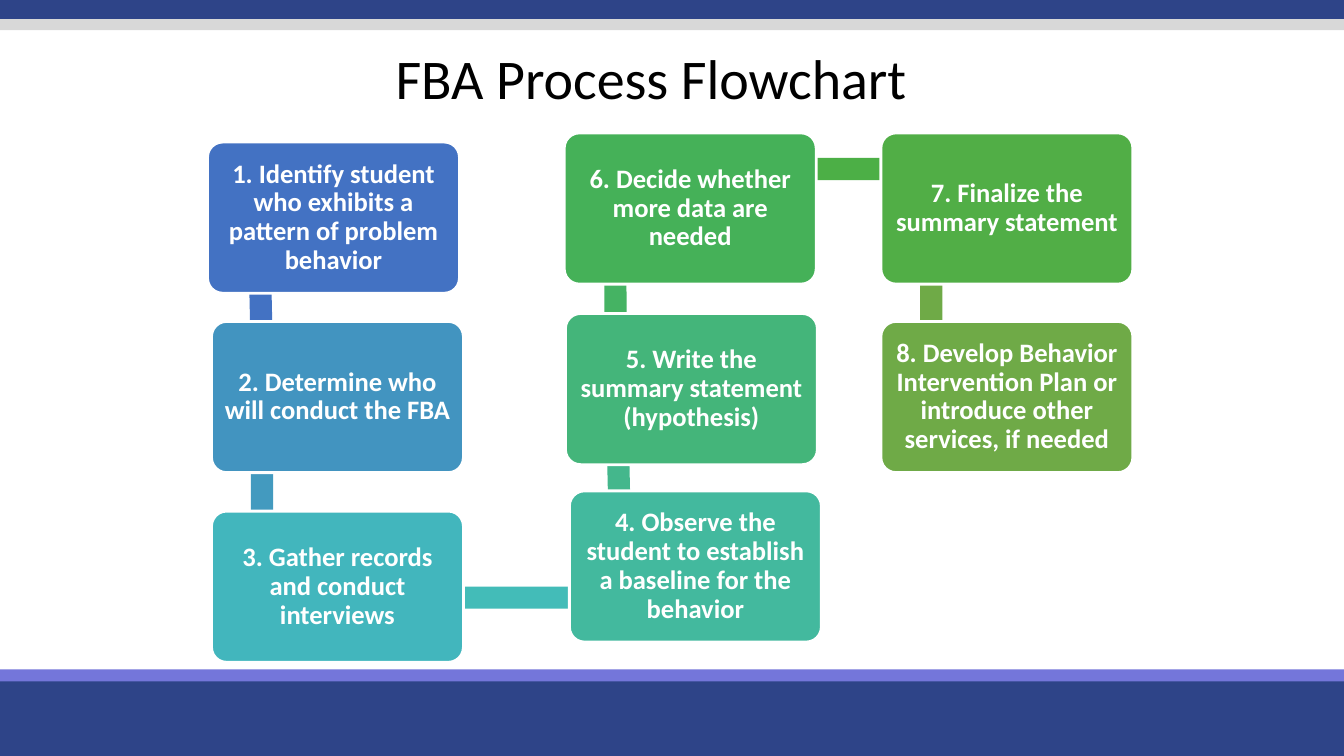
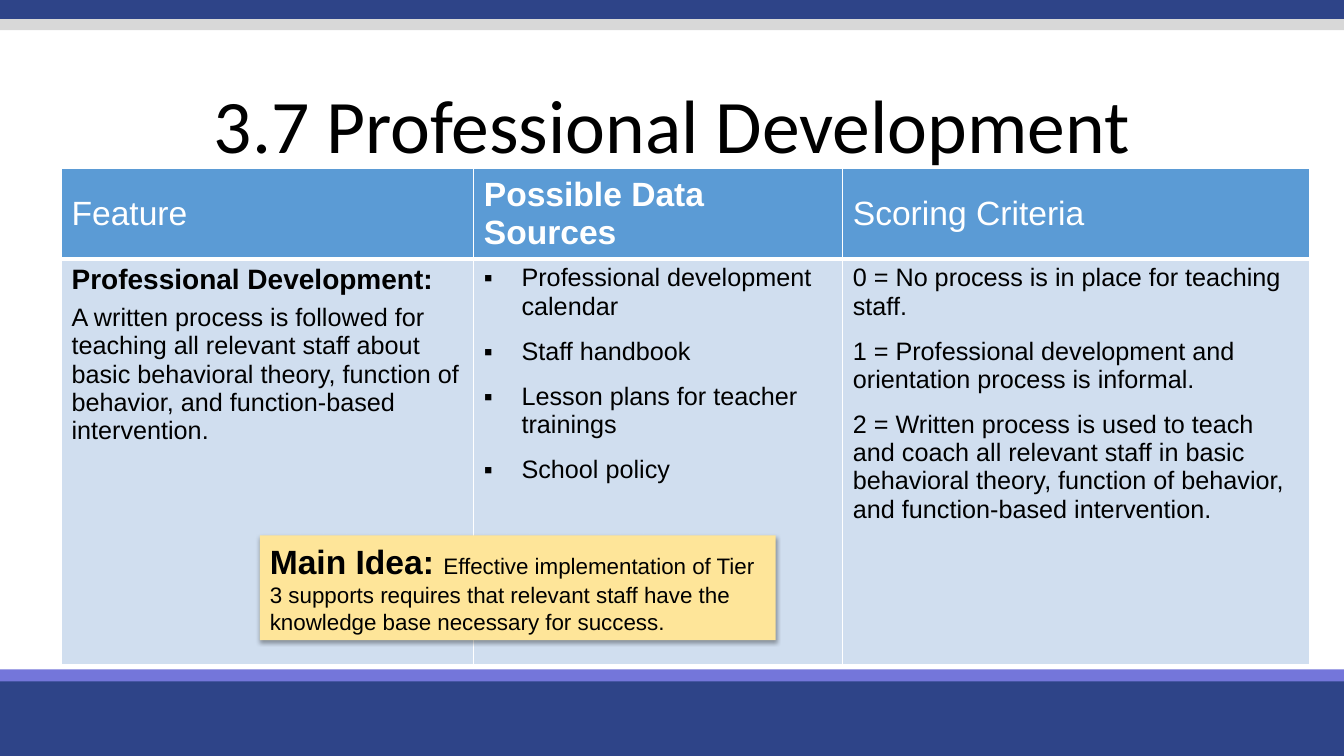
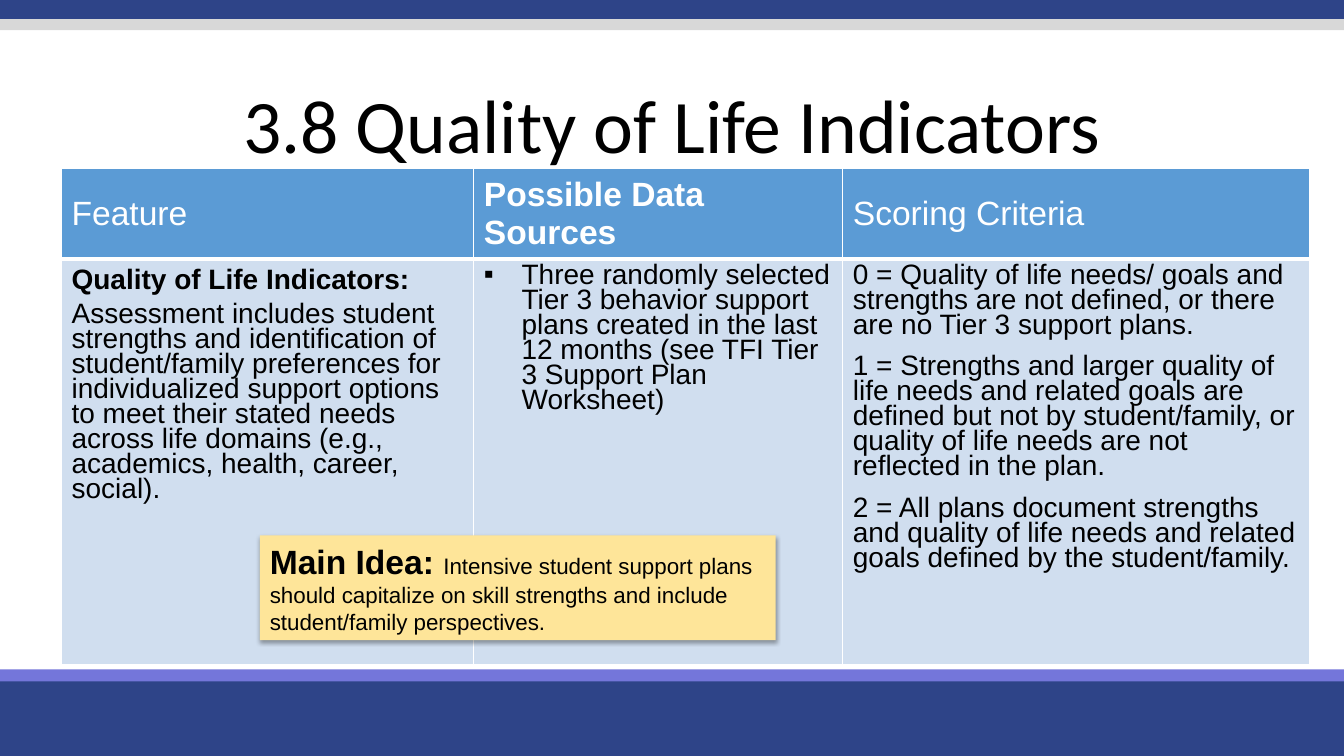
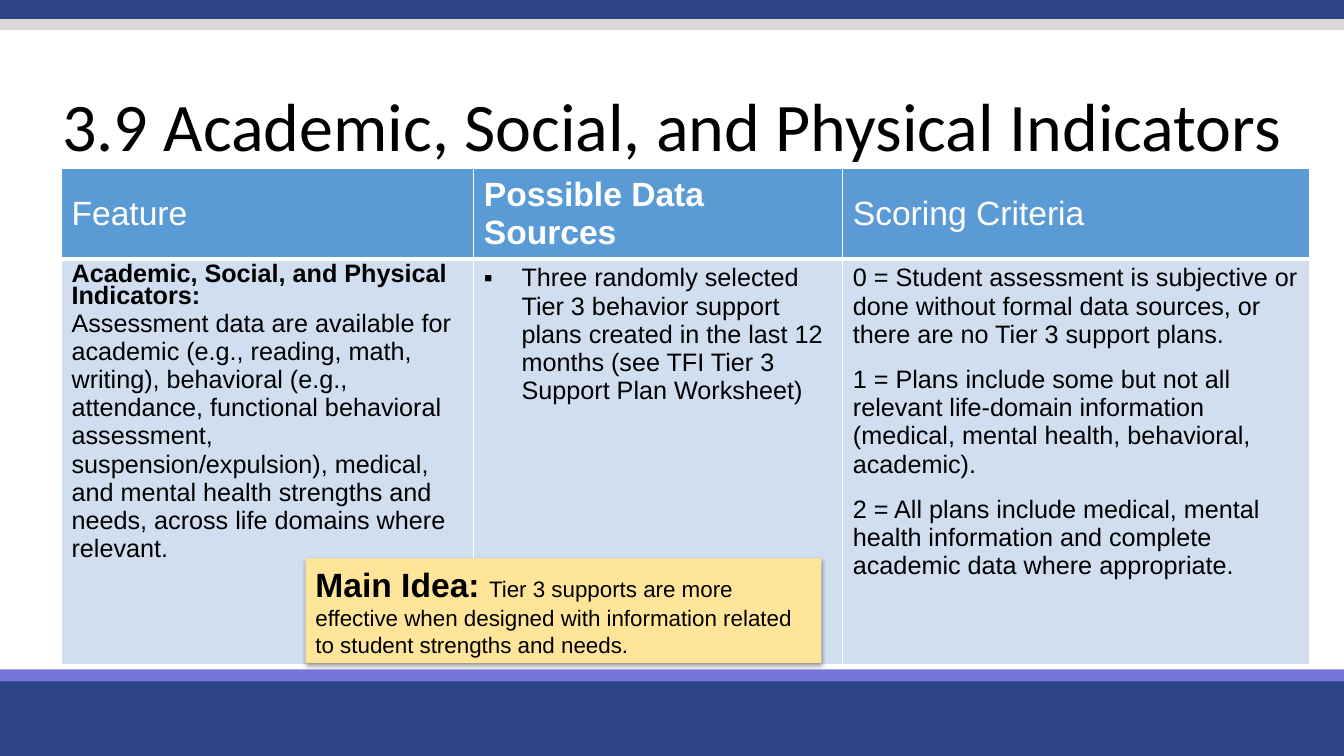
from math import atan2, degrees, hypot

from lxml.etree import SubElement
from pptx import Presentation
from pptx.dml.color import RGBColor
from pptx.enum.shapes import MSO_SHAPE
from pptx.enum.text import MSO_ANCHOR, PP_ALIGN
from pptx.oxml.ns import qn
from pptx.util import Cm, Pt

# Shared style
NAVY = RGBColor(0x2E, 0x44, 0x88)
VIOLET = RGBColor(0x74, 0x76, 0xDA)
SILVER = RGBColor(0xD8, 0xD8, 0xD8)
BLACK = RGBColor(0, 0, 0)
WHITE = RGBColor(0xFF, 0xFF, 0xFF)
HEADER_BLUE = RGBColor(0x5B, 0x9B, 0xD5)
CELL_BLUE = RGBColor(0xD0, 0xDE, 0xEF)
NOTE_YELLOW = RGBColor(0xFE, 0xE5, 0x99)
HEAD_FONT, BODY_FONT = "Calibri", "Arial"

SLIDE_W, SLIDE_H = 33.87, 19.05
BANDS = [(17.02, 2.03, NAVY), (16.87, 0.3, VIOLET), (0, 0.49, NAVY), (0.48, 0.28, SILVER)]

# Flowchart: left and top within the chart, fill, wording
STEP_W, STEP_H, BAR_THICKNESS = 6.35, 3.81, 0.56
STEPS = [
    (0, 0.23, RGBColor(0x43, 0x72, 0xC3), "1. Identify student who exhibits a pattern of problem behavior"),
    (0.1, 4.75, RGBColor(0x42, 0x94, 0xC0), "2. Determine who will conduct the FBA"),
    (0.1, 9.53, RGBColor(0x42, 0xB6, 0xBD), "3. Gather records and conduct interviews"),
    (9.12, 9.02, RGBColor(0x43, 0xB9, 0x9E), "4. Observe the student to establish a baseline for the behavior"),
    (9.02, 4.55, RGBColor(0x44, 0xB5, 0x7A), "5. Write the summary statement (hypothesis)"),
    (8.99, 0, RGBColor(0x45, 0xB1, 0x58), "6. Decide whether more data are needed"),
    (16.97, 0, RGBColor(0x51, 0xAE, 0x46), "7. Finalize the summary statement"),
    (16.97, 4.75, RGBColor(0x6F, 0xAA, 0x47),
     "8. Develop Behavior Intervention Plan or introduce other services, if needed"),
]
# One bar between each step and the next: colour, anchors within both steps
ANCHOR = (1.27, 0.91)
BARS = [
    (RGBColor(0x43, 0x72, 0xC3), ANCHOR, ANCHOR),
    (RGBColor(0x43, 0x9A, 0xBF), ANCHOR, ANCHOR),
    (RGBColor(0x43, 0xBC, 0xB8), (2.05, 2.18), (2.05, 2.69)),
    (RGBColor(0x44, 0xB7, 0x8C), ANCHOR, ANCHOR),
    (RGBColor(0x45, 0xB3, 0x63), ANCHOR, ANCHOR),
    (RGBColor(0x4C, 0xAF, 0x46), ANCHOR, ANCHOR),
    (RGBColor(0x6F, 0xAA, 0x47), ANCHOR, ANCHOR),
]

# Scoring tables
HEADINGS = [("Feature", False), ("Possible Data Sources", True), ("Scoring Criteria", False)]
COLUMN_WIDTHS = [10.39, 9.3, 11.76]
ROW_HEIGHTS = [2.08, 10.21]
PLANS = ("Three randomly selected Tier 3 behavior support plans created in the last "
         "12 months (see TFI Tier 3 Support Plan Worksheet)")
FEATURES = [
    {
        "title": "3.7 Professional Development", "title_size": 54,
        "name": "Professional Development:", "name_size": 20, "name_spacing": None,
        "description": "A written process is followed for teaching all relevant staff about basic "
                       "behavioral theory, function of behavior, and function-based intervention.",
        "gap": 6, "size": 18, "spacing": None,
        "sources": ["Professional development calendar", "Staff handbook",
                    "Lesson plans for teacher trainings", "School policy"],
        "criteria": [
            "0 = No process is in place for teaching staff.",
            "1 = Professional development and orientation process is informal.",
            "2 = Written process is used to teach and coach all relevant staff in basic behavioral "
            "theory, function of behavior, and function-based intervention."],
        "idea": "Effective implementation of Tier 3 supports requires that relevant staff have the "
                "knowledge base necessary for success.",
        "idea_at": (6.55, 13.49),
    },
    {
        "title": "3.8 Quality of Life Indicators", "title_size": 54,
        "name": "Quality of Life Indicators:", "name_size": 20, "name_spacing": None,
        "description": "Assessment includes student strengths and identification of student/family "
                       "preferences for individualized support options to meet their stated needs "
                       "across life domains (e.g., academics, health, career, social).",
        "gap": 6, "size": 20, "spacing": 0.8,
        "sources": [PLANS],
        "criteria": [
            "0 = Quality of life needs/ goals and strengths are not defined, or there are no Tier 3 "
            "support plans.",
            "1 = Strengths and larger quality of life needs and related goals are defined but not by "
            "student/family, or quality of life needs are not reflected in the plan.",
            "2 = All plans document strengths and quality of life needs and related goals defined by "
            "the student/family."],
        "idea": "Intensive student support plans should capitalize on skill strengths and include "
                "student/family perspectives.",
        "idea_at": (6.55, 13.49),
    },
    {
        "title": "3.9 Academic, Social, and Physical Indicators", "title_size": 48.6,
        "name": "Academic, Social, and Physical Indicators:", "name_size": 18, "name_spacing": 0.8,
        "description": "Assessment data are available for academic (e.g., reading, math, writing), "
                       "behavioral (e.g., attendance, functional behavioral assessment, "
                       "suspension/expulsion), medical, and mental health strengths and needs, "
                       "across life domains where relevant.",
        "gap": None, "size": 18, "spacing": None,
        "sources": [PLANS],
        "criteria": [
            "0 = Student assessment is subjective or done without formal data sources, or there are "
            "no Tier 3 support plans.",
            "1 = Plans include some but not all relevant life-domain information (medical, mental "
            "health, behavioral, academic).",
            "2 = All plans include medical, mental health information and complete academic data "
            "where appropriate."],
        "idea": "Tier 3 supports are more effective when designed with information related to "
                "student strengths and needs.",
        "idea_at": (7.7, 14.07),
    },
]


def style_run(run, size, color=BLACK, bold=False, font=BODY_FONT):
    run.font.name = font
    run.font.size = Pt(size)
    run.font.bold = bold
    run.font.color.rgb = color


def add_block(slide, kind, left, top, width, height, fill):
    block = slide.shapes.add_shape(kind, Cm(left), Cm(top), Cm(width), Cm(height))
    block.shadow.inherit = False
    block.fill.solid()
    block.fill.fore_color.rgb = fill
    block.line.fill.background()
    return block


def new_slide(deck, title, size, box):
    """Blank slide with the bands and a centred title in the given box."""
    slide = deck.slides.add_slide(deck.slide_layouts[6])
    for top, height, color in BANDS:
        add_block(slide, MSO_SHAPE.RECTANGLE, 0, top, SLIDE_W, height, color)
    frame = slide.shapes.add_textbox(*(Cm(length) for length in box)).text_frame
    frame.word_wrap = True
    frame.vertical_anchor = MSO_ANCHOR.MIDDLE
    heading = frame.paragraphs[0]
    heading.text = title
    heading.alignment = PP_ALIGN.CENTER
    heading.line_spacing = 0.9
    style_run(heading.runs[0], size, font=HEAD_FONT)
    return slide


# Flowchart parts
def add_bar(slide, start, end, color):
    dx, dy = end[0] - start[0], end[1] - start[1]
    length = hypot(dx, dy)
    left = (start[0] + end[0] - length) / 2
    top = (start[1] + end[1] - BAR_THICKNESS) / 2
    bar = add_block(slide, MSO_SHAPE.RECTANGLE, left, top, length, BAR_THICKNESS, color)
    bar.rotation = degrees(atan2(dy, dx))


def add_step(slide, left, top, color, wording):
    step = add_block(slide, MSO_SHAPE.ROUNDED_RECTANGLE, left, top, STEP_W, STEP_H, color)
    step.adjustments[0] = 0.1
    step.line.color.rgb = WHITE
    step.line.width = Pt(2)
    frame = step.text_frame
    frame.word_wrap = True
    frame.vertical_anchor = MSO_ANCHOR.MIDDLE
    frame.margin_left = frame.margin_right = frame.margin_top = frame.margin_bottom = Cm(0.2)
    label = frame.paragraphs[0]
    label.text = wording
    label.alignment = PP_ALIGN.CENTER
    label.line_spacing = 0.9
    style_run(label.runs[0], 19, WHITE, True, HEAD_FONT)


def add_flowchart(slide, left, top):
    for step, following, (color, leave, arrive) in zip(STEPS, STEPS[1:], BARS):
        start = (left + step[0] + leave[0], top + step[1] + leave[1])
        end = (left + following[0] + arrive[0], top + following[1] + arrive[1])
        add_bar(slide, start, end, color)
    for x, y, color, wording in STEPS:
        add_step(slide, left + x, top + y, color, wording)


# Scoring table parts
def style_cell(cell, fill, edges):
    """Fill the cell and draw white borders; edges gives widths in points."""
    properties = cell._tc.get_or_add_tcPr()
    for side, width in edges.items():
        line = SubElement(properties, qn(f"a:ln{side}"), w=str(Pt(width)))
        SubElement(SubElement(line, qn("a:solidFill")), qn("a:srgbClr"), val=str(WHITE))
    cell.fill.solid()
    cell.fill.fore_color.rgb = fill


def add_bullet(paragraph):
    properties = paragraph._p.get_or_add_pPr()
    properties.set("marL", str(Cm(0.95)))
    properties.set("indent", str(-Cm(0.95)))
    SubElement(SubElement(properties, qn("a:buClr")), qn("a:srgbClr"), val=str(BLACK))
    SubElement(properties, qn("a:buFont"), typeface=BODY_FONT)
    SubElement(properties, qn("a:buChar"), char="▪")


def fill_list(cell, entries, size, spacing, bulleted=False):
    cell.text_frame.text = "\n".join(entries)
    for index, entry in enumerate(cell.text_frame.paragraphs):
        if bulleted:
            add_bullet(entry)
        entry.line_spacing = spacing
        if index:
            entry.space_before = Pt(12)
        style_run(entry.runs[0], size)


def fill_feature(cell, feature):
    cell.text_frame.text = feature["name"] + "\n" + feature["description"]
    name, description = cell.text_frame.paragraphs
    name.line_spacing = feature["name_spacing"]
    style_run(name.runs[0], feature["name_size"], bold=True)
    description.line_spacing = feature["spacing"]
    if feature["gap"]:
        description.space_before = Pt(feature["gap"])
    style_run(description.runs[0], feature["size"])


def add_scoring_table(slide, left, top, feature):
    table = slide.shapes.add_table(2, 3, Cm(left), Cm(top), Cm(sum(COLUMN_WIDTHS)),
                                   Cm(sum(ROW_HEIGHTS))).table
    table.horz_banding = False
    for column, width in zip(table.columns, COLUMN_WIDTHS):
        column.width = Cm(width)
    for row, height in zip(table.rows, ROW_HEIGHTS):
        row.height = Cm(height)
    for index, (heading, bold) in enumerate(HEADINGS):
        header, body = table.cell(0, index), table.cell(1, index)
        style_cell(header, HEADER_BLUE, {"L": 1, "R": 1, "T": 1, "B": 3})
        style_cell(body, CELL_BLUE, {"L": 1, "R": 1, "T": 3, "B": 1})
        header.vertical_anchor = MSO_ANCHOR.MIDDLE
        header.text_frame.text = heading
        style_run(header.text_frame.paragraphs[0].runs[0], 24, WHITE, bold)
    size, spacing = feature["size"], feature["spacing"]
    fill_feature(table.cell(1, 0), feature)
    fill_list(table.cell(1, 1), feature["sources"], size, spacing, bulleted=True)
    fill_list(table.cell(1, 2), feature["criteria"], size, spacing)


def add_main_idea(slide, left, top, idea):
    note = add_block(slide, MSO_SHAPE.RECTANGLE, left, top, 13, 2.64, NOTE_YELLOW)
    effects = note._element.spPr.find(qn("a:effectLst"))
    shadow = SubElement(effects, qn("a:outerShdw"), blurRad=str(Pt(3.1)), dist=str(Pt(1.8)),
                        dir="5400000", rotWithShape="0")
    shade = SubElement(shadow, qn("a:srgbClr"), val=str(BLACK))
    SubElement(shade, qn("a:alpha"), val="35000")
    frame = note.text_frame
    frame.word_wrap = True
    frame.vertical_anchor = MSO_ANCHOR.MIDDLE
    sentence = frame.paragraphs[0]
    sentence.alignment = PP_ALIGN.LEFT
    for wording, size, bold in [("Main Idea: ", 24, True), (idea, 16, False)]:
        run = sentence.add_run()
        run.text = wording
        style_run(run, size, bold=bold)


# Slides
def flowchart_slide(deck):
    slide = new_slide(deck, "FBA Process Flowchart", 40, (0.25, 0.74, 32.31, 2.62))
    add_flowchart(slide, 5.23, 3.35)


def feature_slide(deck, feature):
    slide = new_slide(deck, feature["title"], feature["title_size"], (0, 1.75, SLIDE_W, 3))
    add_scoring_table(slide, 1.55, 4.24, feature)
    add_main_idea(slide, *feature["idea_at"], feature["idea"])


def main():
    deck = Presentation()
    deck.slide_width, deck.slide_height = Cm(SLIDE_W), Cm(SLIDE_H)
    flowchart_slide(deck)
    for feature in FEATURES:
        feature_slide(deck, feature)
    deck.save("out.pptx")


if __name__ == "__main__":
    main()
